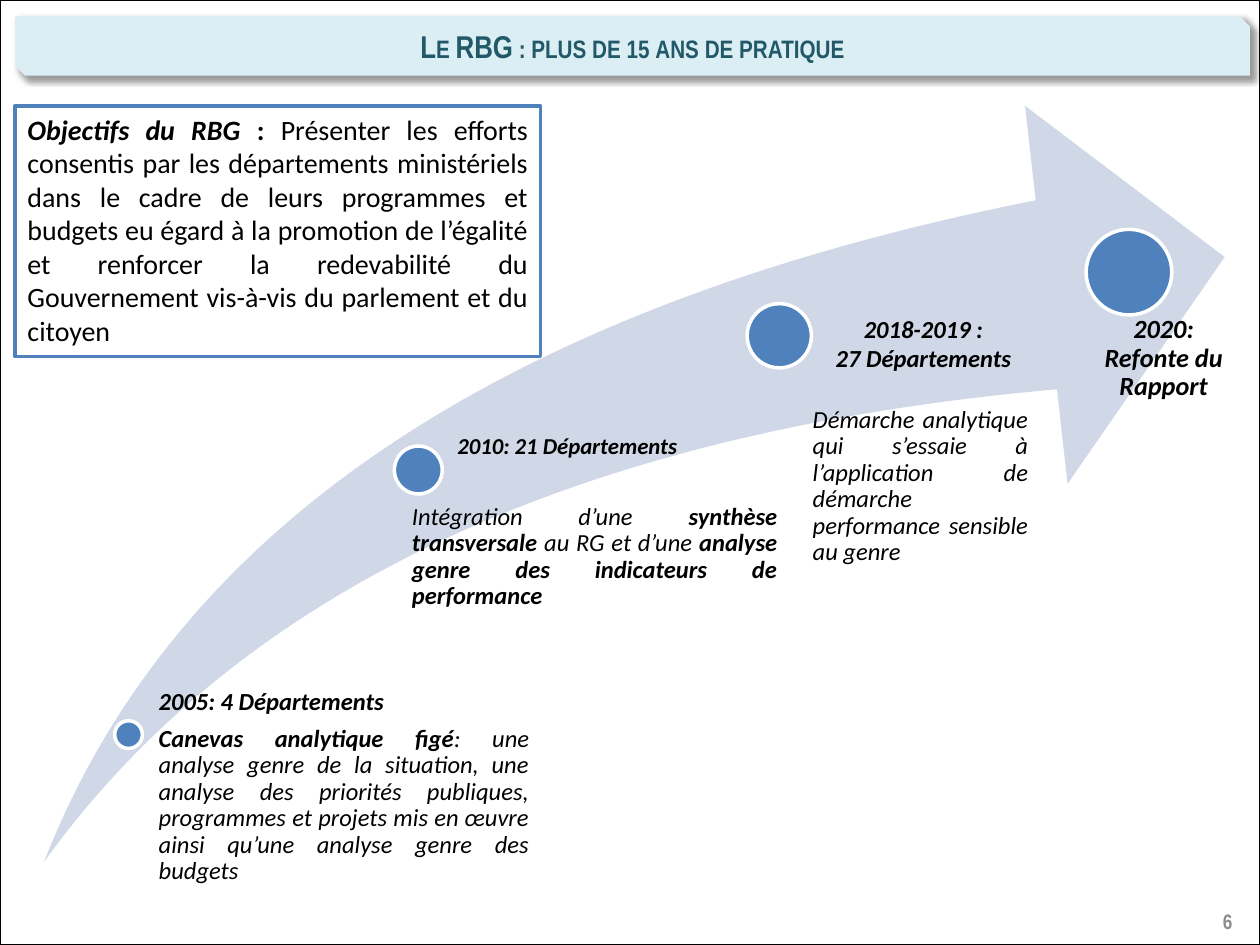
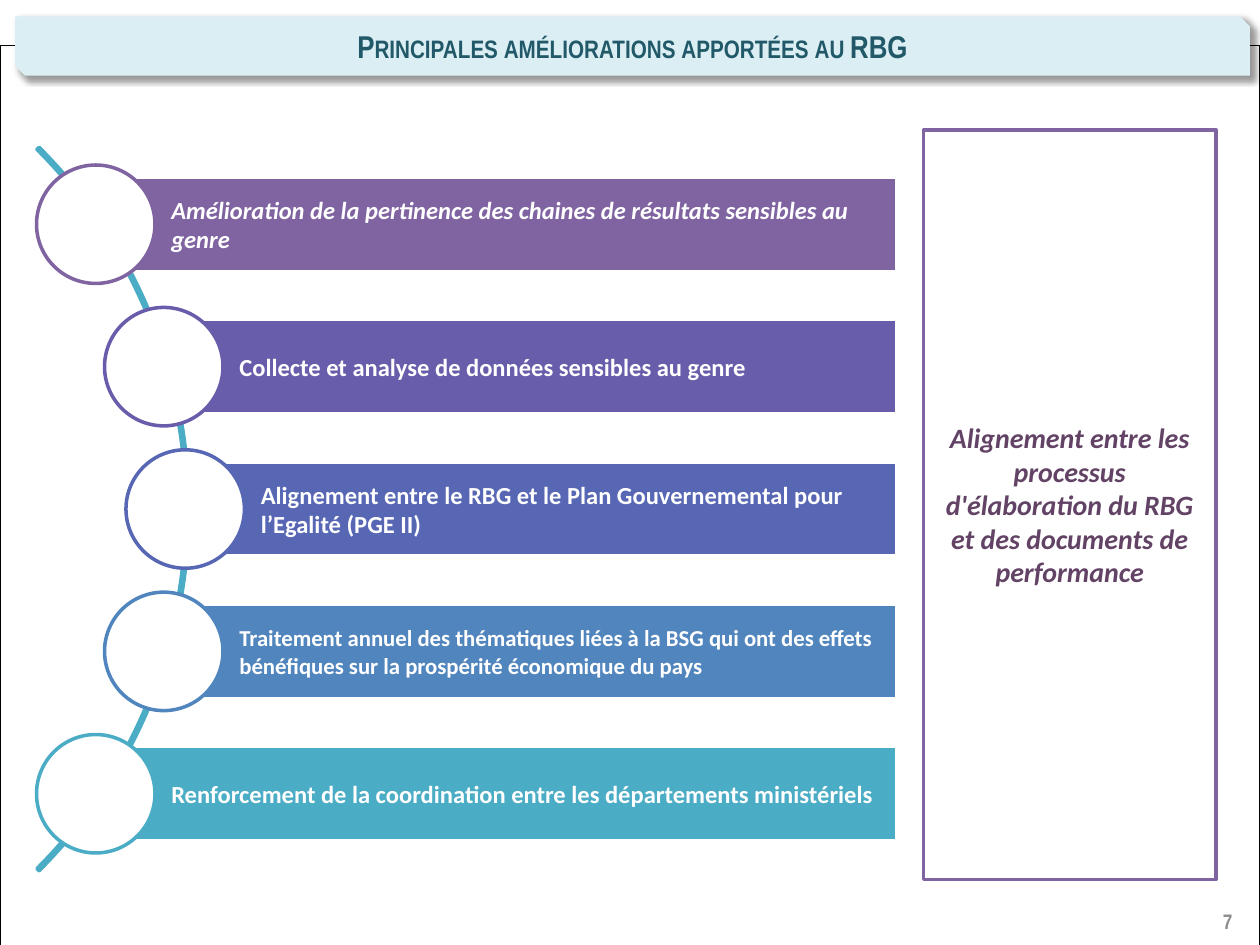
from dataclasses import dataclass

import lxml.etree
import pptx
import pptx.dml.color
import pptx.enum.shapes
import pptx.enum.text
import pptx.oxml.ns
import pptx.presentation
import pptx.shapes.autoshape
import pptx.slide
import pptx.text.text
import pptx.util
from pptx.util import Inches

SHAPE = pptx.enum.shapes.MSO_SHAPE
ALIGN = pptx.enum.text.PP_ALIGN
ANCHOR = pptx.enum.text.MSO_ANCHOR

BLACK, WHITE, BLUE, PURPLE, TEAL = "000000", "FFFFFF", "4F81BD", "8064A2", "4BACC6"
BAND, TITLE, PAGE_NUMBER = "DBEEF4", "215968", "8C8C8C"
SWOOSH, CONCLUSION = "D0D8E8", "634365"
TITLE_FONT, BODY_FONT = "Arial Narrow", "Calibri"
DEFAULT_INSETS = (0.1, 0.05, 0.1, 0.05)
NO_INSETS = (0, 0, 0, 0)


@dataclass(frozen=True)
class Box:
    left: float
    top: float
    width: float
    height: float

    def lengths(self) -> list[pptx.util.Length]:
        return [Inches(v) for v in (self.left, self.top, self.width, self.height)]


@dataclass(frozen=True)
class Style:
    size: float = 14
    color: str = BLACK
    font: str = BODY_FONT
    align: ALIGN = ALIGN.LEFT
    spacing: float = 1.0
    space_after: float = 0


@dataclass(frozen=True)
class Span:
    text: str
    bold: bool = True
    italic: bool = True


@dataclass(frozen=True)
class Paragraph:
    spans: tuple[Span, ...]
    style: Style


@dataclass(frozen=True)
class Milestone:
    box: Box
    paragraphs: tuple[Paragraph, ...]


@dataclass(frozen=True)
class Improvement:
    text: str
    color: str
    center_x: float
    size: float = 14
    italic: bool = False


HEADING = Style(spacing=0.9, space_after=6)
DETAIL = Style(align=ALIGN.JUSTIFY, spacing=0.9)

DOTS = [Box(0.91, 5.72, 0.22, 0.22), Box(3.13, 3.54, 0.38, 0.38),
        Box(5.93, 2.41, 0.51, 0.51), Box(8.62, 1.82, 0.68, 0.68)]

MILESTONES = [
    Milestone(Box(1.26, 5.47, 2.94, 1.43), (
        Paragraph((Span("2005: 4 Départements"),), HEADING),
        Paragraph((
            Span("Canevas analytique figé"),
            Span(": une analyse genre de la situation, une analyse des priorités "
                 "publiques, programmes et projets mis en œuvre ainsi qu’une analyse "
                 "genre des budgets", bold=False)), DETAIL))),
    Milestone(Box(3.63, 3.45, 2.4, 0.25), (
        Paragraph((Span("2010: 21 Départements"),), Style(size=13, spacing=0.9)),)),
    Milestone(Box(3.27, 4.0, 2.9, 0.9), (
        Paragraph((
            Span("Intégration d’une ", bold=False),
            Span("synthèse transversale"),
            Span(" au RG et d’une ", bold=False),
            Span("analyse genre des indicateurs de performance")), DETAIL),)),
    Milestone(Box(6.48, 2.49, 1.7, 0.5), tuple(
        Paragraph((Span(line),), Style(align=ALIGN.CENTER))
        for line in ("2018-2019 :", "27 Départements"))),
    Milestone(Box(6.45, 3.23, 1.71, 1.3), (
        Paragraph((Span("Démarche analytique qui s’essaie à l’application de démarche "
                        "performance sensible au genre", bold=False),), DETAIL),)),
    Milestone(Box(8.68, 2.51, 1.11, 0.7), (
        Paragraph((Span("2020: Refonte du Rapport"),),
                  Style(size=15, align=ALIGN.CENTER, spacing=0.9)),)),
]

IMPROVEMENTS = [
    Improvement("Amélioration de la pertinence des chaines de résultats sensibles au genre",
                PURPLE, 0.76, italic=True),
    Improvement("Collecte et analyse de données sensibles au genre", "685DAB", 1.3),
    Improvement("Alignement entre le RBG et le Plan Gouvernemental pour l’Egalité (PGE II)",
                "5767B4", 1.47),
    Improvement("Traitement annuel des thématiques liées à la BSG qui ont des effets "
                "bénéfiques sur la prospérité économique du pays", "5185BD", 1.3, size=13),
    Improvement("Renforcement de la coordination entre les départements ministériels",
                TEAL, 0.76),
]


def rgb(color: str) -> pptx.dml.color.RGBColor:
    return pptx.dml.color.RGBColor.from_string(color)


def write(frame: pptx.text.text.TextFrame, paragraphs: tuple[Paragraph, ...],
          anchor: ANCHOR = ANCHOR.TOP,
          insets: tuple[float, float, float, float] = DEFAULT_INSETS) -> None:
    frame.word_wrap = True
    frame.vertical_anchor = anchor
    (frame.margin_left, frame.margin_top,
     frame.margin_right, frame.margin_bottom) = [Inches(v) for v in insets]
    for index, content in enumerate(paragraphs):
        paragraph = frame.paragraphs[0] if index == 0 else frame.add_paragraph()
        style = content.style
        paragraph.alignment = style.align
        paragraph.line_spacing = style.spacing
        paragraph.space_after = pptx.util.Pt(style.space_after)
        for span in content.spans:
            run = paragraph.add_run()
            run.text = span.text
            run.font.name = style.font
            run.font.size = pptx.util.Pt(style.size)
            run.font.color.rgb = rgb(style.color)
            run.font.bold = span.bold
            run.font.italic = span.italic


def add_shape(slide: pptx.slide.Slide, kind: SHAPE, box: Box, fill: str | None = None,
              line: str | None = None,
              line_width: float = 2) -> pptx.shapes.autoshape.Shape:
    shape = slide.shapes.add_shape(kind, *box.lengths())
    shape.shadow.inherit = False
    if fill:
        shape.fill.solid()
        shape.fill.fore_color.rgb = rgb(fill)
    else:
        shape.fill.background()
    if line:
        shape.line.color.rgb = rgb(line)
        shape.line.width = pptx.util.Pt(line_width)
    else:
        shape.line.fill.background()
    return shape


def add_text(slide: pptx.slide.Slide, box: Box, paragraphs: tuple[Paragraph, ...],
             anchor: ANCHOR = ANCHOR.TOP,
             insets: tuple[float, float, float, float] = NO_INSETS) -> None:
    write(slide.shapes.add_textbox(*box.lengths()).text_frame, paragraphs, anchor, insets)


def cast_shadow(shape: pptx.shapes.autoshape.Shape) -> None:
    qn = pptx.oxml.ns.qn
    effects = shape.element.spPr.find(qn("a:effectLst"))
    shadow = lxml.etree.SubElement(
        effects, qn("a:outerShdw"), blurRad=str(pptx.util.Pt(4)),
        dist=str(pptx.util.Pt(3)), dir=str(45 * 60000), algn="tl", rotWithShape="0")
    tint = lxml.etree.SubElement(shadow, qn("a:srgbClr"), val=BLACK)
    lxml.etree.SubElement(tint, qn("a:alpha"), val="40000")


def start_slide(deck: pptx.presentation.Presentation, title: str, number: int,
                frame_top: float) -> pptx.slide.Slide:
    """Add a blank slide with its frame, title band and page number."""
    slide = deck.slides.add_slide(deck.slide_layouts[6])
    add_shape(slide, SHAPE.RECTANGLE, Box(0, frame_top, 10, 7.5), line=BLACK, line_width=0.75)
    band = add_shape(slide, SHAPE.SNIP_2_DIAG_RECTANGLE, Box(0.12, 0.13, 9.8, 0.47), BAND)
    cast_shadow(band)
    title_style = Style(18, TITLE, TITLE_FONT, ALIGN.CENTER)
    write(band.text_frame, (Paragraph((Span(title, italic=False),), title_style),),
          ANCHOR.MIDDLE)
    band.text_frame.paragraphs[0].runs[0].font._element.set("cap", "small")
    number_style = Style(12, PAGE_NUMBER, TITLE_FONT, ALIGN.RIGHT)
    add_text(slide, Box(7.55, 7.11, 2.33, 0.4),
             (Paragraph((Span(str(number), italic=False),), number_style),),
             ANCHOR.MIDDLE, DEFAULT_INSETS)
    return slide


def build_history(deck: pptx.presentation.Presentation) -> None:
    slide = start_slide(deck, "Le RBG : plus de 15 ans de pratique", 6, 0)
    swoosh = add_shape(slide, SHAPE.SWOOSH_ARROW, Box(0.35, 0.84, 9.37, 6), SWOOSH)
    swoosh.adjustments[0] = swoosh.adjustments[1] = 0.25
    for dot in DOTS:
        add_shape(slide, SHAPE.OVAL, dot, BLUE, WHITE)
    for milestone in MILESTONES:
        add_text(slide, milestone.box, milestone.paragraphs)

    goals = add_shape(slide, SHAPE.RECTANGLE, Box(0.12, 0.84, 4.17, 1.99), WHITE, BLUE)
    write(goals.text_frame, (Paragraph((
        Span("Objectifs du RBG "),
        Span(": ", italic=False),
        Span("Présenter les efforts consentis par les départements ministériels dans le "
             "cadre de leurs programmes et budgets eu égard à la promotion de l’égalité et "
             "renforcer la redevabilité du Gouvernement vis-à-vis du parlement et du citoyen",
             bold=False, italic=False)), Style(16, align=ALIGN.JUSTIFY)),))


def build_improvements(deck: pptx.presentation.Presentation) -> None:
    slide = start_slide(deck, "Principales améliorations apportées au RBG", 7, 0.36)
    arc = add_shape(slide, SHAPE.BLOCK_ARC, Box(-6.62, -0.02, 8.12, 8.12), line=TEAL)
    for index, value in enumerate((189, 27, 0.003)):
        arc.adjustments[index] = value

    first_center, pitch, bar_right = 1.78, 1.13, 7.12
    bar_height, circle = 0.75, 0.94
    for index, item in enumerate(IMPROVEMENTS):
        center_y = first_center + index * pitch
        bar = add_shape(slide, SHAPE.RECTANGLE,
                        Box(item.center_x, center_y - bar_height / 2,
                            bar_right - item.center_x, bar_height), item.color, WHITE)
        write(bar.text_frame,
              (Paragraph((Span(item.text, italic=item.italic),), Style(item.size, WHITE)),),
              ANCHOR.MIDDLE, (0.6, 0.04, 0.04, 0.04))
        add_shape(slide, SHAPE.OVAL,
                  Box(item.center_x - circle / 2, center_y - circle / 2, circle, circle),
                  WHITE, item.color)

    conclusion = add_shape(slide, SHAPE.RECTANGLE, Box(7.33, 1.03, 2.32, 5.95), WHITE, PURPLE)
    write(conclusion.text_frame, (Paragraph((
        Span("Alignement entre les processus d'élaboration du RBG et des documents de "
             "performance"),), Style(16, CONCLUSION, align=ALIGN.CENTER)),), ANCHOR.MIDDLE)


def main() -> None:
    deck = pptx.Presentation()
    deck.slide_width, deck.slide_height = Inches(10), Inches(7.5)
    build_history(deck)
    build_improvements(deck)
    deck.save("out.pptx")


if __name__ == "__main__":
    main()
